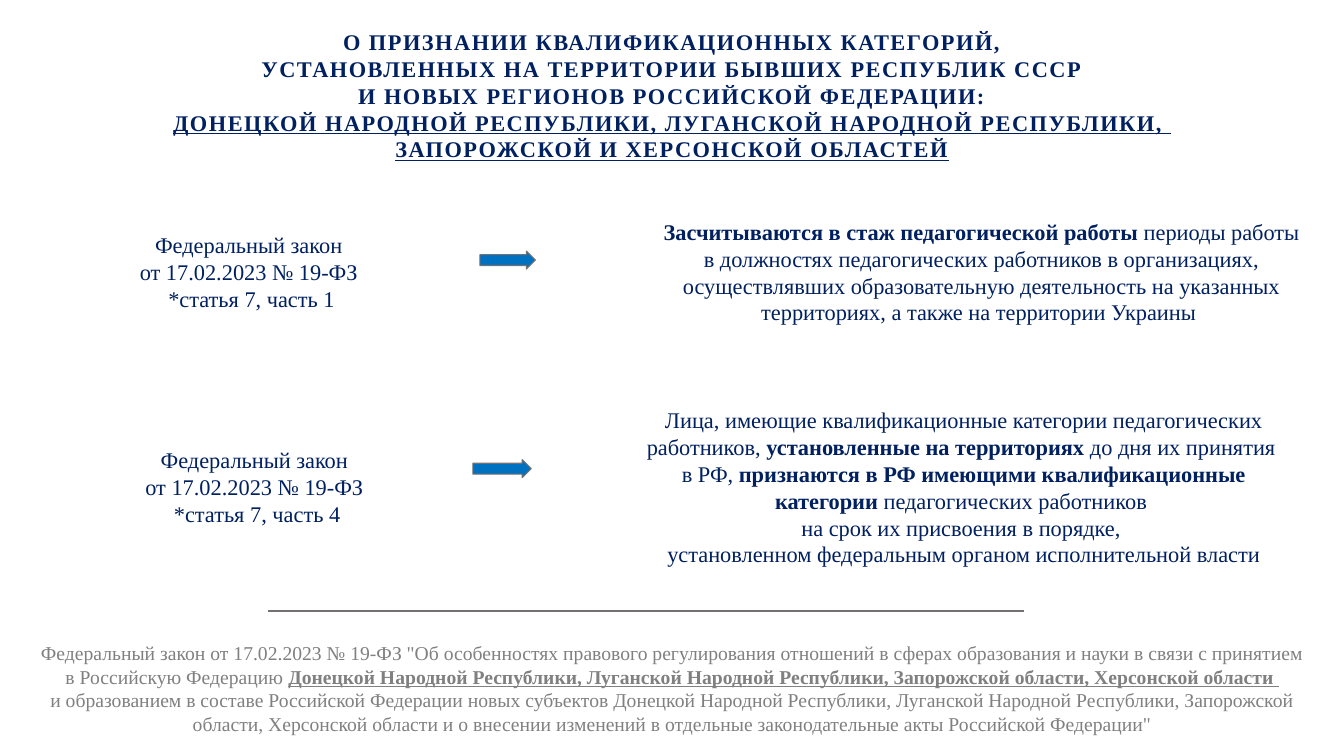
from lxml.etree import SubElement
from pptx import Presentation
from pptx.dml.color import RGBColor
from pptx.enum.shapes import MSO_CONNECTOR, MSO_SHAPE
from pptx.enum.text import MSO_ANCHOR, MSO_AUTO_SIZE, PP_ALIGN
from pptx.oxml.ns import qn
from pptx.util import Inches, Pt

COLORS = {"navy": "002060", "white": "FFFFFF", "blue": "0070C0",
          "line": "767171", "note": "808080"}
FONT = "Times New Roman"
BOLD = {"bold": True}
UNDERLINE = {"underline": True}

TITLE = [
    ["О ПРИЗНАНИИ КВАЛИФИКАЦИОННЫХ КАТЕГОРИЙ,"],
    ["УСТАНОВЛЕННЫХ НА ТЕРРИТОРИИ БЫВШИХ РЕСПУБЛИК СССР"],
    ["И НОВЫХ РЕГИОНОВ РОССИЙСКОЙ ФЕДЕРАЦИИ:"],
    [("ДОНЕЦКОЙ НАРОДНОЙ РЕСПУБЛИКИ, ЛУГАНСКОЙ НАРОДНОЙ РЕСПУБЛИКИ, ", UNDERLINE)],
    [("ЗАПОРОЖСКОЙ И ХЕРСОНСКОЙ ОБЛАСТЕЙ", UNDERLINE)],
]
CREDITED_SERVICE = [[
    ("Засчитываются в стаж педагогической работы ", BOLD),
    "периоды работы в должностях педагогических работников в организациях, "
    "осуществлявших образовательную деятельность на указанных территориях, "
    "а также на территории Украины ",
]]
RECOGNISED_CATEGORIES = [
    ["Лица, имеющие квалификационные категории педагогических работников, ",
     ("установленные на территориях", BOLD), " до дня их принятия "],
    ["в РФ, ", ("признаются в РФ имеющими квалификационные категории ", BOLD),
     "педагогических работников "],
    ["на срок их присвоения в порядке, "],
    ["установленном федеральным органом исполнительной власти"],
]
LAW_NOTE = [
    ['Федеральный закон от 17.02.2023 № 19-ФЗ "Об особенностях правового '
     "регулирования отношений в сферах образования и науки в связи с принятием "
     "в Российскую Федерацию ",
     ("Донецкой Народной Республики, Луганской Народной Республики, "
      "Запорожской области, Херсонской области ", BOLD | UNDERLINE)],
    ["и образованием в составе Российской Федерации новых субъектов Донецкой "
     "Народной Республики, Луганской Народной Республики, Запорожской области, "
     "Херсонской области и о внесении изменений в отдельные законодательные акты "
     'Российской Федерации"'],
]

# Boxes are left, top, width, height in percent of the slide.
ROWS = [
    {"part": 1, "law": (1.35, 23.87, 34.73, 24.13), "arrow": (35.71, 33.2, 4.13, 2.4),
     "effect": (47.86, 23.87, 50.34, 24.13), "text": CREDITED_SERVICE},
    {"part": 4, "law": (3.08, 48, 32.11, 32.8), "arrow": (35.18, 60.8, 4.35, 2.4),
     "effect": (46.36, 48, 50.71, 32.8), "text": RECOGNISED_CATEGORIES},
]


def color(name):
    return RGBColor.from_string(COLORS[name])


def write_text(frame, paragraphs, size=16, ink="navy", bold=False, spacing=None,
               anchor=MSO_ANCHOR.MIDDLE, margins=(0.07, 0.07)):
    """Fill a frame; each paragraph lists plain strings or (string, font settings)."""
    frame.word_wrap = True
    frame.auto_size = MSO_AUTO_SIZE.NONE
    frame.vertical_anchor = anchor
    frame.margin_left = frame.margin_right = Inches(margins[0])
    frame.margin_top = frame.margin_bottom = Inches(margins[1])
    for index, parts in enumerate(paragraphs):
        paragraph = frame.add_paragraph() if index else frame.paragraphs[0]
        paragraph.alignment = PP_ALIGN.CENTER
        for part in parts:
            text, settings = (part, {}) if isinstance(part, str) else part
            run = paragraph.add_run()
            run.text = text
            font = run.font
            font.name, font.size = FONT, Pt(size)
            font.bold = settings.get("bold", bold)
            font.underline = settings.get("underline", False)
            font.color.rgb = color(ink)
            if spacing:
                font._element.set("spc", str(round(spacing * 100)))


class SlideBuilder:
    def __init__(self, presentation):
        self.width = presentation.slide_width
        self.height = presentation.slide_height
        self.slide = presentation.slides.add_slide(presentation.slide_layouts[5])

    def place(self, left, top, width, height):
        """Turn percentages of the slide into lengths."""
        return [round(share * side / 100) for share, side in
                zip((left, top, width, height), (self.width, self.height) * 2)]

    def title(self, box, paragraphs):
        shape = self.slide.shapes.title
        shape.left, shape.top, shape.width, shape.height = self.place(*box)
        write_text(shape.text_frame, paragraphs, bold=True, spacing=1.1,
                   margins=(0.13, 0.07))

    def shape(self, kind, box, adjustments, fill, line, line_width):
        shape = self.slide.shapes.add_shape(kind, *self.place(*box))
        shape.shadow.inherit = False
        for index, value in enumerate(adjustments):
            shape.adjustments[index] = value
        shape.fill.solid()
        shape.fill.fore_color.rgb = color(fill)
        shape.line.color.rgb = color(line)
        shape.line.width = Pt(line_width)
        return shape

    def card(self, box, paragraphs):
        card = self.shape(MSO_SHAPE.ROUNDED_RECTANGLE, box, [0.1], "white", "white", 1)
        write_text(card.text_frame, paragraphs)

    def arrow(self, box):
        self.shape(MSO_SHAPE.RIGHT_ARROW, box, [0.6, 0.5], "blue", "line", 0.75)

    def rule(self, left, top, width):
        x, y, length, _ = self.place(left, top, width, 0)
        line = self.slide.shapes.add_connector(MSO_CONNECTOR.STRAIGHT, x, y, x + length, y)
        line.line.color.rgb = color("line")
        line.line.width = Pt(1)
        SubElement(line._element.spPr, qn("a:effectLst"))

    def note(self, box, paragraphs):
        shape = self.slide.shapes.add_textbox(*self.place(*box))
        write_text(shape.text_frame, paragraphs, size=14, ink="note",
                   anchor=MSO_ANCHOR.TOP, margins=(0.1, 0.05))


def main():
    presentation = Presentation()
    presentation.slide_width = Inches(13.33)
    presentation.slide_height = Inches(7.5)
    builder = SlideBuilder(presentation)
    builder.title((0, 2, 100, 21.2), TITLE)
    for row in ROWS:
        builder.card(row["law"], [["Федеральный закон "], ["от 17.02.2023 № 19-ФЗ "],
                                  [f"*статья 7, часть {row['part']}"]])
        builder.arrow(row["arrow"])
        builder.card(row["effect"], row["text"])
    builder.rule(19.95, 80.8, 56.27)
    builder.note((1.88, 84.13, 96.32, 13.87), LAW_NOTE)
    presentation.save("out.pptx")


if __name__ == "__main__":
    main()
